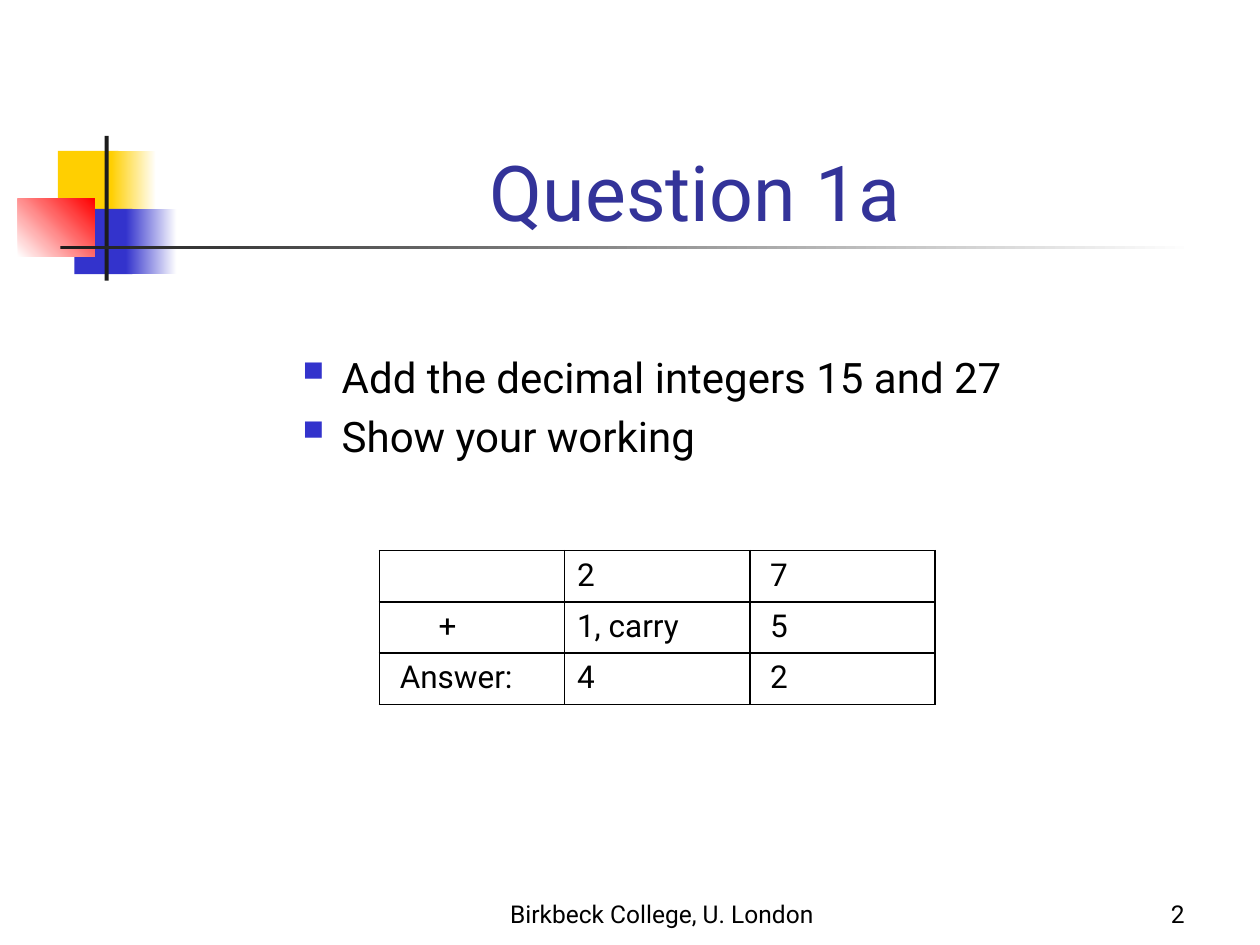
import lxml.etree
import pptx
import pptx.dml.color
import pptx.enum.shapes
import pptx.enum.text
import pptx.oxml.ns
import pptx.util

Cm = pptx.util.Cm
Align = pptx.enum.text.PP_ALIGN
Anchor = pptx.enum.text.MSO_ANCHOR


def color(value):
    """Turn a hex string into a colour."""
    return pptx.dml.color.RGBColor.from_string(value)


def add_node(parent, tag, **attributes):
    """Append a drawing element to a parent element."""
    node = lxml.etree.SubElement(parent, pptx.oxml.ns.qn(tag))
    for name, value in attributes.items():
        node.set(name, str(value))
    return node


def write(para, text, size=14, ink="000000", align=Align.LEFT):
    """Put formatted text in a paragraph."""
    para.alignment = align
    span = para.add_run()
    span.text = text
    span.font.name = "Roboto"
    span.font.size = pptx.util.Pt(size)
    span.font.color.rgb = color(ink)


def add_box(page, left, top, width, height, anchor=Anchor.TOP):
    """Add a wrapping text box and return its text frame."""
    box = page.shapes.add_textbox(Cm(left), Cm(top), Cm(width), Cm(height))
    frame = box.text_frame
    frame.word_wrap = True
    frame.vertical_anchor = anchor
    return frame


def add_block(page, left, top, width, height, start, end=None, angle=0):
    """Add a rectangle with a plain fill or a two-colour gradient."""
    block = page.shapes.add_shape(
        pptx.enum.shapes.MSO_SHAPE.RECTANGLE, Cm(left), Cm(top), Cm(width), Cm(height))
    block.shadow.inherit = False
    block.line.fill.background()
    if end is None:
        block.fill.solid()
        block.fill.fore_color.rgb = color(start)
        return
    block.fill.gradient()
    block.fill.gradient_angle = angle
    for stop, position, value in zip(block.fill.gradient_stops, (0, 1), (start, end)):
        stop.position = position
        stop.color.rgb = color(value)


def add_ornament(page, left, top):
    """Draw the coloured squares and the crossing bars."""
    yellow, blue, red, dark, white = "FFCF01", "3333CC", "FF0000", "1C1C1C", "FFFFFF"
    add_block(page, left + 0.81, top + 0.3, 1.22, 1.32, yellow)
    add_block(page, left + 1.88, top + 0.3, 0.91, 1.32, yellow, white)
    add_block(page, left + 1.14, top + 1.47, 1.17, 1.32, blue)
    add_block(page, left + 2.18, top + 1.47, 1.02, 1.32, blue, white)
    add_block(page, left, top + 1.27, 1.55, 1.17, white, red, angle=45)
    add_block(page, left + 1.75, top, 0.08, 2.92, dark)
    add_block(page, left + 0.86, top + 2.21, 22.86, 0.08, dark, white)


def add_title(page, left, top, width, height):
    """Write the centred title above the bar."""
    frame = add_box(page, left, top, width, height, Anchor.BOTTOM)
    write(frame.paragraphs[0], "Question 1a", size=44, ink="333399", align=Align.CENTER)


def add_footer(page, top, height):
    """Write the college name and the page number."""
    for left, width, text, align in (
        (9.32, 8.05, "Birkbeck College, U. London", Align.CENTER),
        (18.85, 5.28, "2", Align.RIGHT),
    ):
        frame = add_box(page, left, top, width, height, Anchor.BOTTOM)
        write(frame.paragraphs[0], text, align=align)


def add_tasks(page, left, top, width, height):
    """Write the bulleted tasks."""
    frame = add_box(page, left, top, width, height)
    for index, text in enumerate(("Add the decimal integers 15 and 27", "Show your working")):
        para = frame.add_paragraph() if index else frame.paragraphs[0]
        write(para, text, size=24)
        settings = para._p.get_or_add_pPr()
        settings.set("marL", str(Cm(0.95)))
        settings.set("indent", str(-Cm(0.95)))
        add_node(add_node(settings, "a:spcBef"), "a:spcPct", val=20000)
        add_node(add_node(settings, "a:buClr"), "a:srgbClr", val="3333CC")
        add_node(settings, "a:buSzPct", val=120000)
        add_node(settings, "a:buChar", char="▪")


def style_cell(cell):
    """Clear the cell fill and draw thin black borders."""
    settings = cell._tc.get_or_add_tcPr()
    for side in ("a:lnL", "a:lnR", "a:lnT", "a:lnB"):
        line = add_node(settings, side, w=pptx.util.Pt(1))
        add_node(add_node(line, "a:solidFill"), "a:srgbClr", val="000000")
    cell.fill.background()


def add_sum(page, left, top, width, height):
    """Lay out the worked addition as a table."""
    rows = (("", "2", "7"), ("+", "1, carry", "5"), ("Answer:", "4", "2"))
    column_indents = (0.16, 0, 0.16)
    table = page.shapes.add_table(3, 3, Cm(left), Cm(top), Cm(width), Cm(height)).table
    for row, texts in enumerate(rows):
        for column, text in enumerate(texts):
            cell = table.cell(row, column)
            indent = 0.94 if text == "+" else column_indents[column]
            cell.margin_left = Cm(0.25 + indent)
            style_cell(cell)
            if text:
                write(cell.text_frame.paragraphs[0], text, size=18)


def main():
    """Build the slide and save it."""
    deck = pptx.Presentation()
    deck.slide_width, deck.slide_height = Cm(25.4), Cm(19.05)
    page = deck.slides.add_slide(deck.slide_layouts[6])
    add_ornament(page, 0.36, 2.74)
    add_title(page, 3.2, 1.73, 21.64, 3.18)
    add_footer(page, 17.58, 1.27)
    add_tasks(page, 5.69, 6.96, 15.77, 2.84)
    add_sum(page, 7.65, 11.1, 11.2, 3.1)
    deck.save("out.pptx")


if __name__ == "__main__":
    main()
